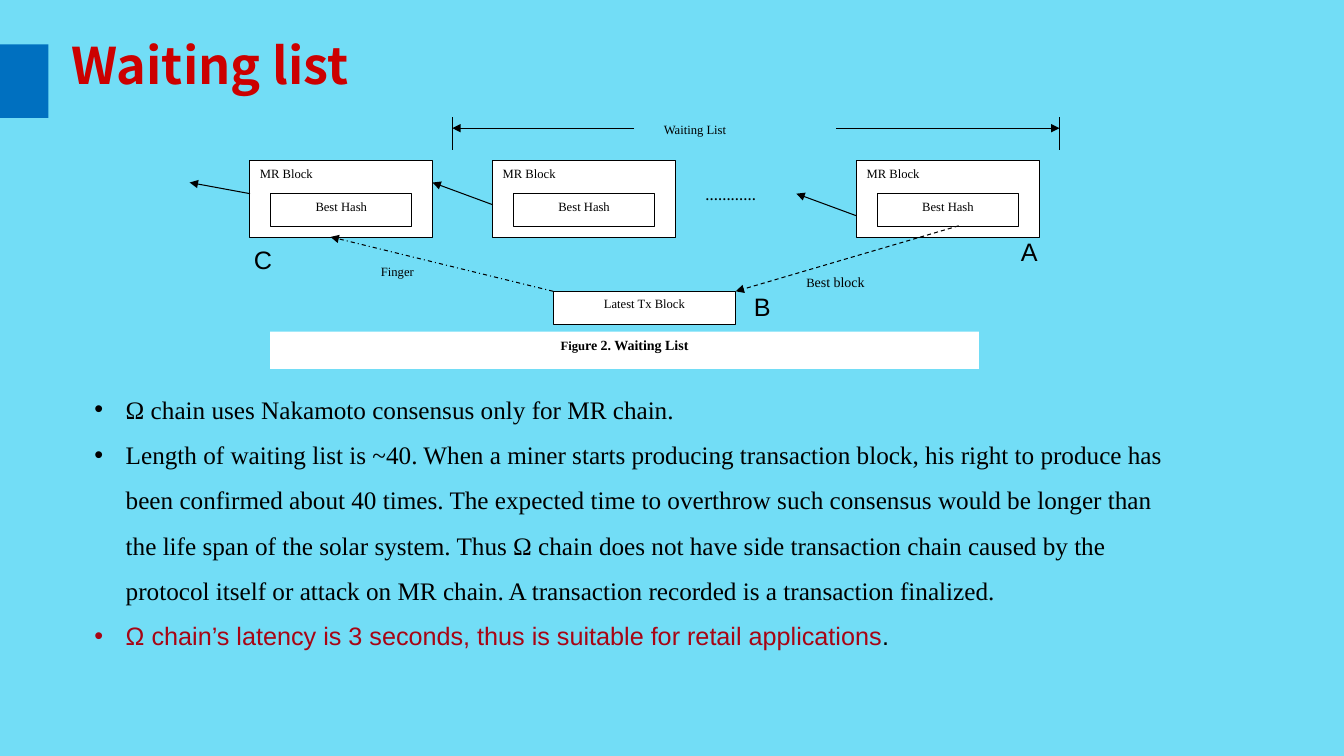
import pptx
import pptx.util
import pptx.dml.color
import pptx.enum.dml
import pptx.enum.shapes
import pptx.enum.text
import pptx.oxml.ns
import lxml.etree
from dataclasses import dataclass

Cm = pptx.util.Cm
Pt = pptx.util.Pt
ALIGN = pptx.enum.text.PP_ALIGN
ANCHOR = pptx.enum.text.MSO_ANCHOR
DASH = pptx.enum.dml.MSO_LINE
qn = pptx.oxml.ns.qn
rgb = pptx.dml.color.RGBColor.from_string


@dataclass(frozen=True)
class Theme:
    background: str = "72DDF6"
    accent: str = "0070C0"
    title: str = "CC0000"
    highlight: str = "A70514"
    ink: str = "000000"
    paper: str = "FFFFFF"
    title_font: str = "Noto Sans CJK SC"
    serif: str = "Times New Roman"
    sans: str = "Arial"
    title_size: float = 36
    body_size: float = 18
    caption_size: float = 10
    label_size: float = 9
    line_width: float = 0.75


theme = Theme()

deck = pptx.Presentation()
deck.slide_width, deck.slide_height = Cm(33.87), Cm(19.05)
slide = deck.slides.add_slide(deck.slide_layouts[6])
slide.background.fill.solid()
slide.background.fill.fore_color.rgb = rgb(theme.background)


def add_block(place, paragraphs=(), fill=None, outline=False, align=ALIGN.LEFT, wrap=True):
    """Add a rectangle, or a text box when there is no fill.

    place is left, top, width, height in cm; a paragraph is a list of
    (text, size, font, colour, bold) runs.
    """
    lengths = [Cm(length) for length in place]
    if fill:
        block = slide.shapes.add_shape(pptx.enum.shapes.MSO_SHAPE.RECTANGLE, *lengths)
        block.shadow.inherit = False
        block.fill.solid()
        block.fill.fore_color.rgb = rgb(fill)
        if outline:
            block.line.color.rgb = rgb(theme.ink)
            block.line.width = Pt(theme.line_width)
        else:
            block.line.fill.background()
    else:
        block = slide.shapes.add_textbox(*lengths)
    frame = block.text_frame
    frame.word_wrap = wrap
    frame.vertical_anchor = ANCHOR.TOP
    for index, runs in enumerate(paragraphs):
        paragraph = frame.add_paragraph() if index else frame.paragraphs[0]
        paragraph.alignment = align
        for text, size, font, colour, bold in runs:
            run = paragraph.add_run()
            run.text = text
            run.font.size = Pt(size)
            run.font.name = font
            run.font.bold = bold
            run.font.color.rgb = rgb(colour)
            east_asian = lxml.etree.SubElement(run.font._element, qn("a:ea"))
            east_asian.set("typeface", font)
    return block


def add_line(start, end, arrow=True, dash=None):
    line = slide.shapes.add_connector(
        pptx.enum.shapes.MSO_CONNECTOR.STRAIGHT,
        *[Cm(length) for length in (*start, *end)])
    line.line.color.rgb = rgb(theme.ink)
    line.line.width = Pt(theme.line_width)
    if dash:
        line.line.dash_style = dash
    if arrow:
        head = lxml.etree.SubElement(line.line._get_or_add_ln(), qn("a:tailEnd"))
        head.set("type", "triangle")
    lxml.etree.SubElement(line._element.spPr, qn("a:effectLst"))


# Heading
add_block((0, 1.12, 1.22, 1.85), fill=theme.accent)
heading = add_block((1.55, 0.74, 22.48, 1.78), [
    [("Waiting list", theme.title_size, theme.title_font, theme.title, True)]])
heading.text_frame.vertical_anchor = ANCHOR.MIDDLE

# Explanation
body_style = (theme.body_size, theme.serif, theme.ink, False)
explanation = add_block((2.13, 9.42, 27.48, 7.14), [
    [("Ω chain uses Nakamoto consensus only for MR chain.", *body_style)],
    [("Length of waiting list is ~40. When a miner starts producing transaction block, "
      "his right to produce has been confirmed about 40 times. The expected time to "
      "overthrow such consensus would be longer than the life span of the solar system. "
      "Thus Ω chain does not have side transaction chain caused by the protocol itself "
      "or attack on MR chain. A transaction recorded is a transaction finalized.",
      *body_style)],
    [("Ω chain’s latency is 3 seconds, thus is suitable for retail applications",
      theme.body_size, theme.sans, theme.highlight, False),
     (".", theme.body_size, theme.sans, theme.ink, False)],
])
for point in explanation.text_frame.paragraphs:
    point.line_spacing = 1.5
    properties = point._p.get_or_add_pPr()
    properties.set("marL", str(Cm(0.79)))
    properties.set("indent", str(Cm(-0.79)))
    lxml.etree.SubElement(properties, qn("a:buFont")).set("typeface", theme.sans)
    lxml.etree.SubElement(properties, qn("a:buChar")).set("char", "•")

# Blocks of the chain
label_style = (theme.label_size, theme.serif, theme.ink, False)
block_width, inner_height = 4.6, 0.84
for left in (6.3, 12.42, 21.59):
    add_block((left, 4.05, block_width, 1.93), [[("MR Block", *label_style)]],
              fill=theme.paper, outline=True)
    add_block((left + 0.52, 4.88, 3.56, inner_height), [[("Best Hash", *label_style)]],
              fill=theme.paper, outline=True, align=ALIGN.CENTER)
add_block((13.94, 7.34, block_width, inner_height), [[("Latest Tx Block", *label_style)]],
          fill=theme.paper, outline=True, align=ALIGN.CENTER)

# Links between blocks
for start, end, dash in (
    ((6.3, 4.88), (4.78, 4.6), None),
    ((12.42, 5.16), (10.9, 4.6), None),
    ((21.59, 5.44), (20.07, 4.88), None),
    ((24.16, 5.69), (18.54, 7.34), DASH.DASH),
    ((13.94, 7.34), (8.33, 5.97), DASH.DASH_DOT),
):
    add_line(start, end, dash=dash)

# Span of the waiting list
for span_end, inner_end in ((11.4, 15.98), (26.7, 21.08)):
    add_line((span_end, 2.95), (span_end, 3.78), arrow=False)
    add_line((inner_end, 3.23), (span_end, 3.23))

# Labels and caption
for left, top, runs in (
    (16.48, 2.95, [("Waiting List", *label_style)]),
    (17.53, 4.6, [("…………", theme.label_size, theme.serif, theme.ink, True)]),
    (9.35, 6.53, [("Finger", *label_style)]),
    (20.07, 6.78, [("B", *label_style),
                   ("est block", theme.caption_size, theme.serif, theme.ink, False)]),
):
    add_block((left, top, 4.09, inner_height), [runs])
add_block((6.81, 8.36, 17.86, 0.94), [
    [("Figu", theme.label_size, theme.serif, theme.ink, True),
     ("re 2. Waiting List", theme.caption_size, theme.serif, theme.ink, True)]],
    fill=theme.paper, align=ALIGN.CENTER)

for letter, left, top in (("A", 25.48, 5.82), ("B", 18.75, 7.21), ("C", 6.15, 6.02)):
    add_block((left, top, 0.94, 1.02),
              [[(letter, theme.body_size, theme.sans, theme.ink, False)]], wrap=False)

deck.save("out.pptx")
